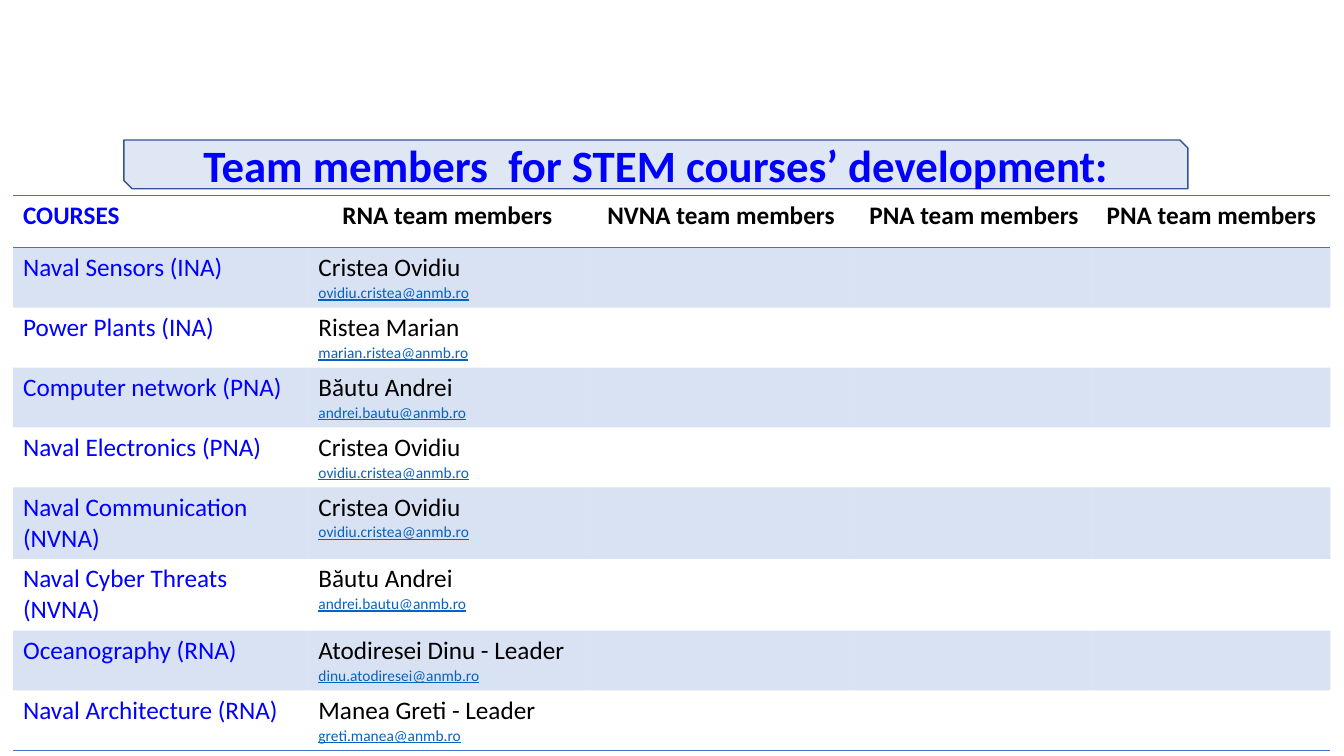
from dataclasses import dataclass

from lxml.etree import SubElement
from pptx import Presentation
from pptx.dml.color import RGBColor
from pptx.enum.shapes import MSO_SHAPE as Preset
from pptx.enum.text import MSO_ANCHOR as Anchor, PP_ALIGN as Align
from pptx.oxml.ns import qn
from pptx.util import Pt

COLORS = {
    "blue": "0000FF",
    "black": "000000",
    "link": "0563C1",
    "accent": "4472C4",
    "title_fill": "DFE7F5",
    "title_line": "325491",
}
FONT = "Calibri"
NO_STYLE = "{2D5ABB26-0587-4C30-8999-92F81FD0307C}"
HEADERS = ["COURSES", "RNA team members", "NVNA team members",
           "PNA team members", "PNA team members"]
COLUMN_WIDTHS = [211, 198.7, 192.2, 169.2, 169.9]
ROW_HEIGHT = 37.5
BAND_OPACITY = 20


@dataclass
class Course:
    name: str
    member: str
    email: str


COURSES = [
    Course("Naval Sensors (INA)", "Cristea Ovidiu", "ovidiu.cristea@anmb.ro"),
    Course("Power Plants (INA)", "Ristea Marian", "marian.ristea@anmb.ro"),
    Course("Computer network (PNA)", "Băutu Andrei", "andrei.bautu@anmb.ro"),
    Course("Naval Electronics (PNA)", "Cristea Ovidiu", "ovidiu.cristea@anmb.ro"),
    Course("Naval Communication (NVNA)", "Cristea Ovidiu", "ovidiu.cristea@anmb.ro"),
    Course("Naval Cyber Threats (NVNA)", "Băutu Andrei", "andrei.bautu@anmb.ro"),
    Course("Oceanography (RNA)", "Atodiresei Dinu - Leader", "dinu.atodiresei@anmb.ro"),
    Course("Naval Architecture (RNA)", "Manea Greti - Leader", "greti.manea@anmb.ro"),
]


def color(name: str) -> RGBColor:
    return RGBColor.from_string(COLORS[name])


def write(paragraph, text: str, size: float, color_name: str, bold: bool = False,
          underline: bool = False, align: Align = Align.LEFT) -> None:
    paragraph.text = text
    paragraph.alignment = align
    font = paragraph.font
    font.name, font.size = FONT, Pt(size)
    font.bold, font.underline = bold, underline
    font.color.rgb = color(color_name)


def add_border(cell, side: str) -> None:
    properties = cell._tc.get_or_add_tcPr()
    line = SubElement(properties, qn(f"a:{side}"), w=str(Pt(1)))
    fill = SubElement(line, qn("a:solidFill"))
    SubElement(fill, qn("a:srgbClr"), val=COLORS["accent"])


def fill_band(cell) -> None:
    cell.fill.solid()
    cell.fill.fore_color.rgb = color("accent")
    tint = cell._tc.tcPr.find(qn("a:solidFill")).find(qn("a:srgbClr"))
    SubElement(tint, qn("a:alpha"), val=str(BAND_OPACITY * 1000))


def add_title(slide) -> None:
    shape = slide.shapes.add_shape(Preset.SNIP_2_DIAG_RECTANGLE,
                                   Pt(88.5), Pt(100), Pt(760), Pt(34.8))
    shape.shadow.inherit = False
    shape.fill.solid()
    shape.fill.fore_color.rgb = color("title_fill")
    shape.line.color.rgb = color("title_line")
    shape.line.width = Pt(1)
    frame = shape.text_frame
    frame.word_wrap = True
    frame.vertical_anchor = Anchor.MIDDLE
    write(frame.paragraphs[0], "Team members  for STEM courses’ development:",
          32, "blue", bold=True, align=Align.CENTER)


def add_course_table(slide) -> None:
    row_count = len(COURSES) + 1
    frame = slide.shapes.add_table(row_count, len(HEADERS), Pt(9.3), Pt(139.5),
                                   Pt(sum(COLUMN_WIDTHS)), Pt(ROW_HEIGHT * row_count))
    table = frame.table
    table._tbl.tblPr.find(qn("a:tableStyleId")).text = NO_STYLE
    for column, width in zip(table.columns, COLUMN_WIDTHS):
        column.width = Pt(width)

    for row_index, row in enumerate(table.rows):
        row.height = Pt(ROW_HEIGHT)
        for cell in row.cells:
            if row_index == 0:
                add_border(cell, "lnT")
            if row_index in (0, row_count - 1):
                add_border(cell, "lnB")
            if row_index % 2:
                fill_band(cell)
            else:
                cell.fill.background()

    for index, header in enumerate(HEADERS):
        write(table.cell(0, index).text_frame.paragraphs[0], header, 18,
              "black" if index else "blue", bold=True,
              align=Align.CENTER if index else Align.LEFT)

    for row_index, course in enumerate(COURSES, start=1):
        write(table.cell(row_index, 0).text_frame.paragraphs[0], course.name, 18, "blue")
        member_frame = table.cell(row_index, 1).text_frame
        write(member_frame.paragraphs[0], course.member, 18, "black")
        write(member_frame.add_paragraph(), course.email, 11, "link", underline=True)


def main() -> None:
    presentation = Presentation()
    presentation.slide_width, presentation.slide_height = Pt(960), Pt(540)
    slide = presentation.slides.add_slide(presentation.slide_layouts[6])
    add_title(slide)
    add_course_table(slide)
    presentation.save("out.pptx")


if __name__ == "__main__":
    main()
